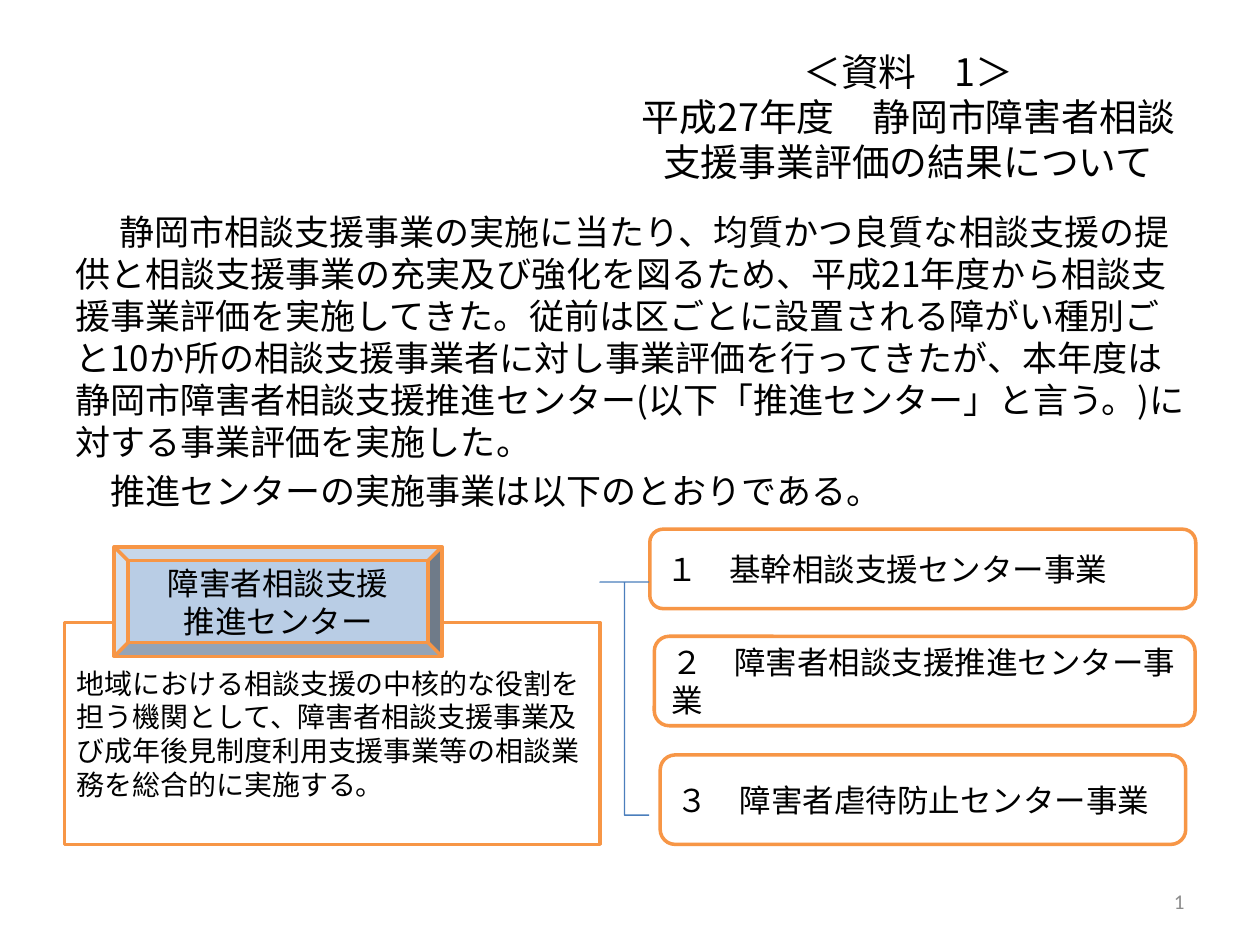
from dataclasses import dataclass

from lxml.etree import SubElement
from pptx import Presentation
from pptx.dml.color import RGBColor
from pptx.enum.shapes import MSO_SHAPE
from pptx.enum.text import MSO_ANCHOR, PP_ALIGN
from pptx.oxml.ns import qn
from pptx.util import Pt

FONT = "Noto Sans CJK JP"
BLACK = "000000"
WHITE = "FFFFFF"
ORANGE = "F79646"
BLUE = "4B7EBC"


@dataclass
class Area:
    left: float
    top: float
    width: float
    height: float

    def lengths(self) -> tuple:
        return Pt(self.left), Pt(self.top), Pt(self.width), Pt(self.height)


@dataclass
class Panel:
    area: Area
    lines: list[str]
    size: float = 18
    preset: MSO_SHAPE = MSO_SHAPE.ROUNDED_RECTANGLE
    fill: str = WHITE
    align: PP_ALIGN = PP_ALIGN.LEFT


def color(value: str) -> RGBColor:
    return RGBColor.from_string(value)


def style_paragraph(paragraph, size: float, align=PP_ALIGN.LEFT, name=FONT, ink=BLACK) -> None:
    paragraph.alignment = align
    paragraph.line_spacing = Pt(round(size * 1.2, 1))
    font = paragraph.font
    font.size = Pt(size)
    font.color.rgb = color(ink)
    font.name = name
    defaults = paragraph._p.pPr.find(qn("a:defRPr"))
    SubElement(defaults, qn("a:ea")).set("typeface", name)


def write_lines(frame, lines: list[str], size: float, align=PP_ALIGN.LEFT) -> list:
    frame.word_wrap = True
    for index, line in enumerate(lines):
        paragraph = frame.paragraphs[0] if index == 0 else frame.add_paragraph()
        paragraph.text = line
        style_paragraph(paragraph, size, align)
    return list(frame.paragraphs)


def place_title(page) -> None:
    title = page.shapes.title
    title.left, title.top, title.width, title.height = Area(36, 21.6, 648, 90).lengths()
    title.text_frame.vertical_anchor = MSO_ANCHOR.MIDDLE
    lines = ["＜資料　1＞", "平成27年度　静岡市障害者相談支援事業評価の結果について"]
    label, heading = write_lines(title.text_frame, lines, 21.6, PP_ALIGN.CENTER)
    label._p.pPr.set("marL", str(Pt(318)))


def add_introduction(page) -> None:
    box = page.shapes.add_textbox(*Area(36, 116.64, 648, 184).lengths())
    lines = [
        "静岡市相談支援事業の実施に当たり、均質かつ良質な相談支援の提供と相談支援事業の充実及び強化を図るため、"
        "平成21年度から相談支援事業評価を実施してきた。従前は区ごとに設置される障がい種別ごと10か所の"
        "相談支援事業者に対し事業評価を行ってきたが、本年度は静岡市障害者相談支援推進センター"
        "(以下「推進センター」と言う。)に対する事業評価を実施した。",
        "推進センターの実施事業は以下のとおりである。",
    ]
    for paragraph, indent in zip(write_lines(box.text_frame, lines, 20), (25, 20)):
        paragraph.space_before = Pt(4)
        paragraph._p.pPr.set("indent", str(Pt(indent)))


def add_page_number(page) -> None:
    box = page.shapes.add_textbox(*Area(516, 500.5, 168, 28.75).lengths())
    box.text_frame.vertical_anchor = MSO_ANCHOR.MIDDLE
    paragraph = box.text_frame.paragraphs[0]
    style_paragraph(paragraph, 12, PP_ALIGN.RIGHT, "Calibri", "8C8C8C")
    field = SubElement(paragraph._p, qn("a:fld"))
    field.set("id", "{B6F15528-21DE-4FAA-801E-634DDDAF4B2B}")
    field.set("type", "slidenum")
    SubElement(field, qn("a:t")).text = "1"


def add_panel(page, panel: Panel) -> None:
    shape = page.shapes.add_shape(panel.preset, *panel.area.lengths())
    shape.shadow.inherit = False
    shape.fill.solid()
    shape.fill.fore_color.rgb = color(panel.fill)
    shape.line.color.rgb = color(ORANGE)
    shape.line.width = Pt(2)
    shape.text_frame.vertical_anchor = MSO_ANCHOR.MIDDLE
    write_lines(shape.text_frame, panel.lines, panel.size, panel.align)


def add_brace(page, area: Area) -> None:
    brace = page.shapes.add_shape(MSO_SHAPE.LEFT_BRACE, *area.lengths())
    brace.adjustments[0] = 0
    brace.adjustments[1] = 0
    brace.shadow.inherit = False
    brace.fill.background()
    brace.line.color.rgb = color(BLUE)
    brace.line.width = Pt(0.75)


PANELS = [
    Panel(
        Area(36.9, 355.8, 306, 126.7),
        ["地域における相談支援の中核的な役割を担う機関として、障害者相談支援事業及び"
         "成年後見制度利用支援事業等の相談業務を総合的に実施する。"],
        size=16,
        preset=MSO_SHAPE.RECTANGLE,
    ),
    Panel(
        Area(65.3, 312.5, 187.2, 62.6),
        ["障害者相談支援", "推進センター"],
        preset=MSO_SHAPE.BEVEL,
        fill="B9CDE5",
        align=PP_ALIGN.CENTER,
    ),
    Panel(Area(371.3, 302.4, 312, 45.4), ["１　基幹相談支援センター事業"]),
    Panel(Area(373.9, 363.6, 309, 51.1), ["２　障害者相談支援推進センター事業"]),
    Panel(Area(377.3, 431.4, 300.3, 51.1), ["３　障害者虐待防止センター事業"]),
]


def main() -> None:
    deck = Presentation()
    deck.slide_width, deck.slide_height = Pt(720), Pt(540)
    page = deck.slides.add_slide(deck.slide_layouts[5])
    place_title(page)
    add_introduction(page)
    add_page_number(page)
    for panel in PANELS:
        add_panel(page, panel)
    add_brace(page, Area(342.8, 332.6, 28.1, 133.2))
    deck.save("out.pptx")


if __name__ == "__main__":
    main()
